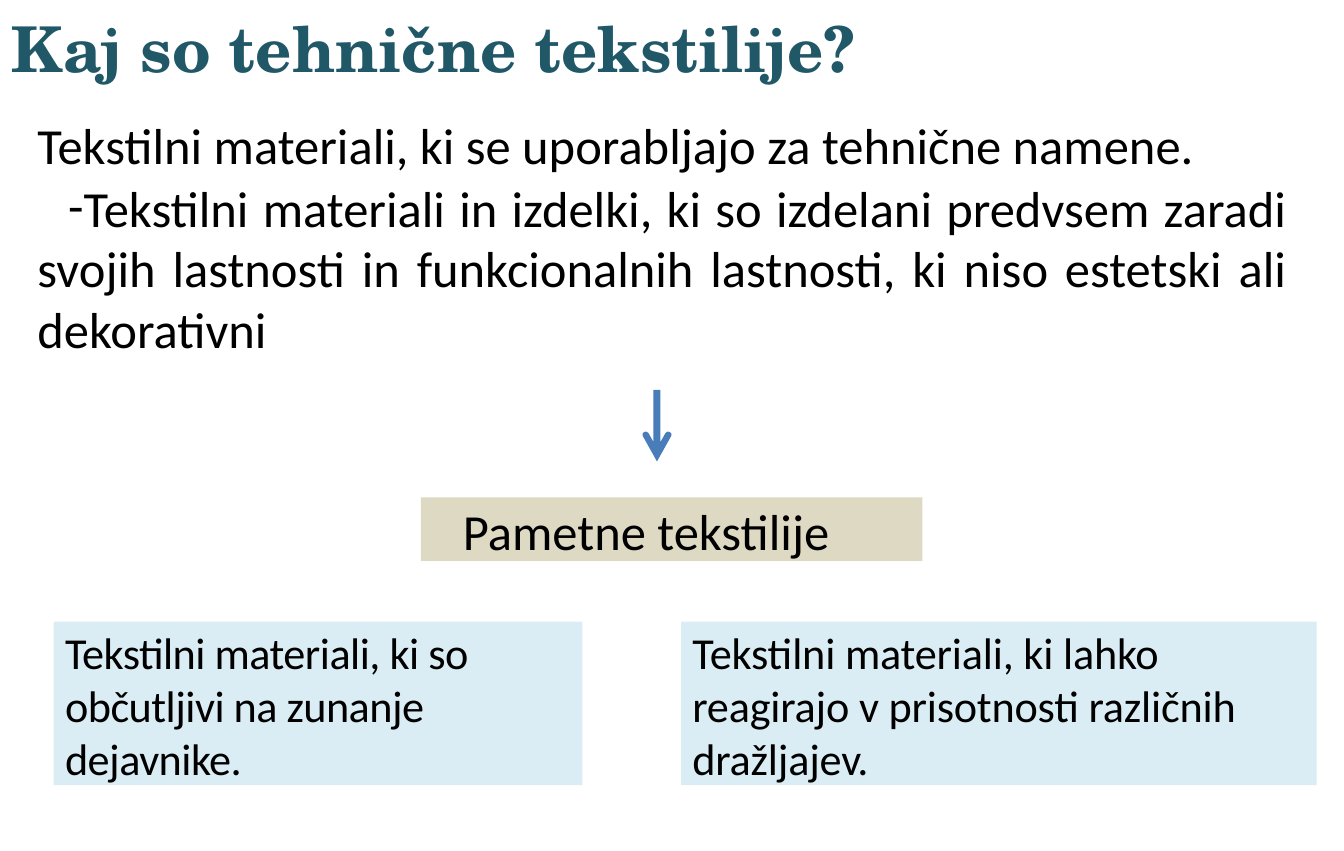
from lxml import etree
from pptx import Presentation
from pptx import util as u
from pptx.dml.color import RGBColor
from pptx.enum import shapes, text
from pptx.oxml import ns

Pt = u.Pt
TEAL = RGBColor(0x20, 0x58, 0x68)
BLACK = RGBColor(0, 0, 0)
BLUE = RGBColor(0x49, 0x7D, 0xBA)
SAND = RGBColor(0xDD, 0xD9, 0xC3)
PALE_BLUE = RGBColor(0xDB, 0xED, 0xF4)


def prepare_frame(holder, top_inset):
    frame = holder.text_frame
    frame.word_wrap = True
    frame.vertical_anchor = text.MSO_ANCHOR.TOP
    frame.margin_left = frame.margin_right = frame.margin_bottom = 0
    frame.margin_top = Pt(top_inset)
    return frame


def write(paragraph, words, size, before, left, indent=0, font="Calibri",
          color=BLACK, bold=False, spacing=0, align=text.PP_ALIGN.LEFT):
    paragraph.alignment = align
    paragraph.space_before = Pt(before)
    properties = paragraph._p.get_or_add_pPr()
    properties.set("marL", str(Pt(left)))
    properties.set("indent", str(Pt(indent)))
    run = paragraph.add_run()
    run.text = words
    run.font.name = font
    run.font.size = Pt(size)
    run.font.bold = bold
    run.font.color.rgb = color
    if spacing:
        run._r.get_or_add_rPr().set("spc", str(spacing))


deck = Presentation()
deck.slide_width = Pt(851)
deck.slide_height = Pt(539)
slide = deck.slides.add_slide(deck.slide_layouts[6])

title = slide.shapes.add_textbox(Pt(6.5), Pt(5), Pt(839), Pt(49.7))
write(prepare_frame(title, 0.9).paragraphs[0], "Kaj so tehnične tekstilije?",
      40, 0.9, 0.9, font="TeX Gyre Schola", color=TEAL, bold=True)

definition = slide.shapes.add_textbox(Pt(22.8), Pt(71.4), Pt(792.7), Pt(157))
definition_frame = prepare_frame(definition, 0.9)
write(definition_frame.paragraphs[0],
      "Tekstilni materiali, ki se uporabljajo za tehnične namene.",
      32, 1.1, 0.9, align=text.PP_ALIGN.JUSTIFY)
purpose = definition_frame.add_paragraph()
write(purpose,
      "Tekstilni materiali in izdelki, ki so izdelani predvsem zaradi svojih "
      "lastnosti in funkcionalnih lastnosti, ki niso estetski ali dekorativni",
      32, 1.1, 0.9, indent=19.5, align=text.PP_ALIGN.JUSTIFY)
bullet_properties = purpose._p.get_or_add_pPr()
etree.SubElement(bullet_properties, ns.qn("a:buFont")).set("typeface", "Calibri")
etree.SubElement(bullet_properties, ns.qn("a:buChar")).set("char", "-")

ARROW_CENTER = 416
right_half = [(2.2, 247), (2.2, 280), (5.4, 274.3), (6.6, 273.4), (8, 273.6),
              (9.1, 274.6), (9.1, 276), (0, 292.3)]
left_half = [(-x, y) for x, y in reversed(right_half[:-1])]
outline = [(Pt(ARROW_CENTER + x), Pt(y)) for x, y in right_half + left_half]
builder = slide.shapes.build_freeform(*outline[0])
builder.add_line_segments(outline[1:], close=True)
arrow = builder.convert_to_shape()
arrow.shadow.inherit = False
arrow.fill.solid()
arrow.fill.fore_color.rgb = BLUE
arrow.line.fill.background()

BOXES = [
    (266.5, 315, 317.5, 40.3, SAND, "Pametne tekstilije", 32, 1.4, 1.7, 26.6, 0),
    (34, 393.8, 334.8, 103.5, PALE_BLUE,
     "Tekstilni materiali, ki so občutljivi na zunanje dejavnike.",
     28, 2.2, 1.8, 7.2, -30),
    (431.2, 393.8, 402.5, 103.5, PALE_BLUE,
     "Tekstilni materiali, ki lahko reagirajo v prisotnosti različnih dražljajev.",
     28, 2.2, 1.8, 7.2, -10),
]
for x, y, width, height, fill, words, size, inset, before, left, spacing in BOXES:
    box = slide.shapes.add_shape(shapes.MSO_SHAPE.RECTANGLE,
                                 Pt(x), Pt(y), Pt(width), Pt(height))
    box.shadow.inherit = False
    box.fill.solid()
    box.fill.fore_color.rgb = fill
    box.line.fill.background()
    write(prepare_frame(box, inset).paragraphs[0], words, size, before, left,
          spacing=spacing)

deck.save("out.pptx")
